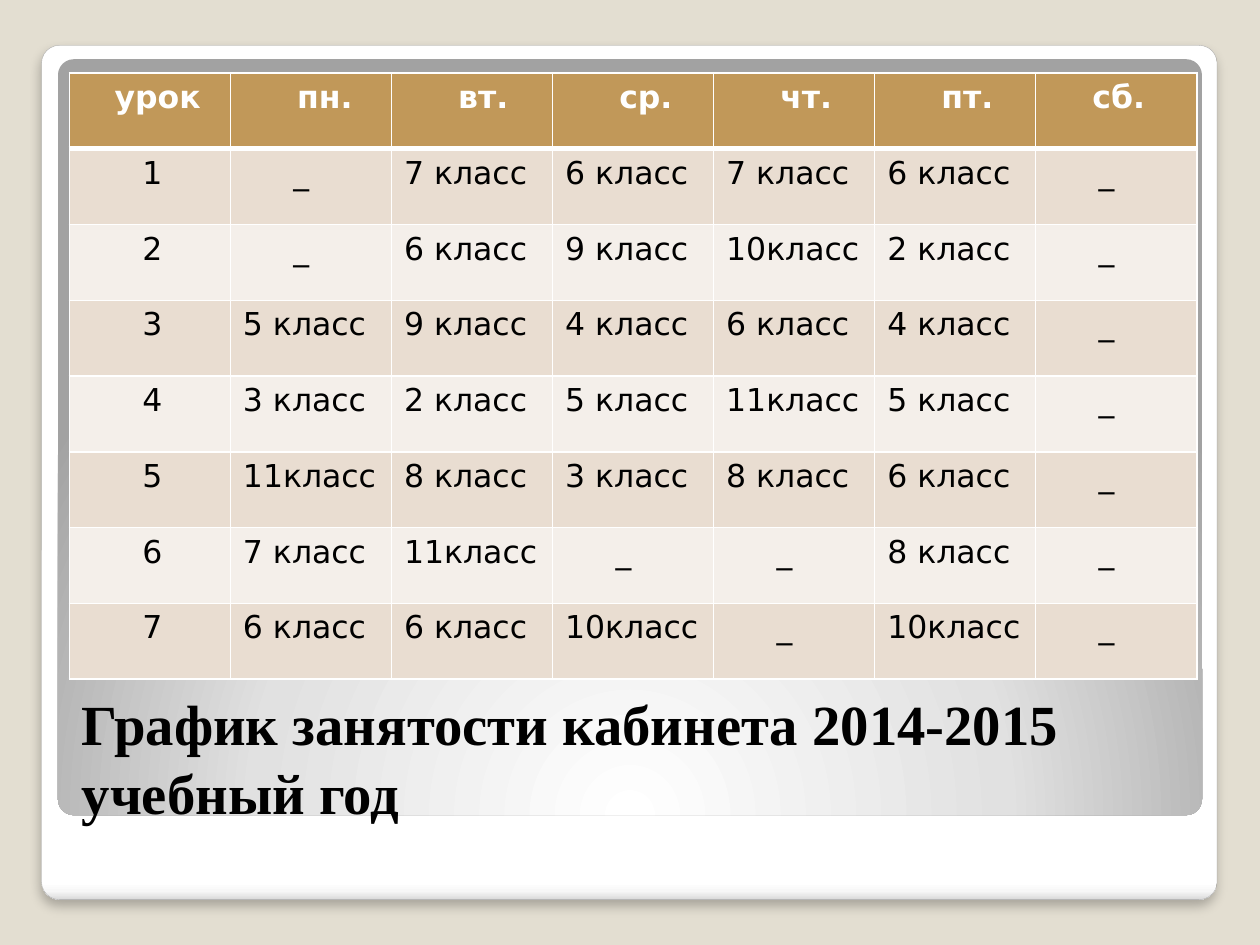
import dataclasses
import lxml.etree
import pptx
import pptx.dml.color
import pptx.enum.shapes
import pptx.enum.text
import pptx.oxml
import pptx.oxml.ns
import pptx.util

Inches = pptx.util.Inches
Pt = pptx.util.Pt

TITLE = "График занятости кабинета 2014-2015 учебный год"
DAYS = ["урок", "пн.", "вт.", "ср.", "чт.", "пт.", "сб."]
LESSONS = [
    ["1", "_", "7 класс", "6 класс", "7 класс", "6 класс", "_"],
    ["2", "_", "6 класс", "9 класс", "10класс", "2 класс", "_"],
    ["3", "5 класс", "9 класс", "4 класс", "6 класс", "4 класс", "_"],
    ["4", "3 класс", "2 класс", "5 класс", "11класс", "5 класс", "_"],
    ["5", "11класс", "8 класс", "3 класс", "8 класс", "6 класс", "_"],
    ["6", "7 класс", "11класс", "_", "_", "8 класс", "_"],
    ["7", "6 класс", "6 класс", "10класс", "_", "10класс", "_"],
]
HEADER_INDENTS = [0.26, 0.43, 0.43, 0.43, 0.43, 0.43, 0.35]
NUMBER_INDENT, DASH_INDENT, CELL_MARGIN = 0.48, 0.4, 0.1

CARD_STOPS = [(0, "FFFFFF"), (98, "FFFFFF"), (99, "F7F7F7"), (100, "DADADA")]
PANEL_STOPS = [(0, "FFFFFF"), (55, "E1E1E1"), (100, "A2A2A2")]
DOWNWARD = '<a:lin ang="5400000" scaled="0"/>'
FROM_BELOW = ('<a:path path="circle"><a:fillToRect l="50000" t="175000" '
              'r="50000" b="-75000"/></a:path>')


@dataclasses.dataclass
class Theme:
    background: str = "E3DED1"
    card_line: str = "A4A4A4"
    header: str = "C19859"
    bands: tuple = ("E9DDD1", "F4EFEA")
    light: str = "FFFFFF"
    dark: str = "000000"
    title_font: str = "Times New Roman"
    table_font: str = "DejaVu Sans"
    title_size: float = 32.4
    table_size: float = 18


theme = Theme()


def rgb(color):
    return pptx.dml.color.RGBColor.from_string(color)


def element(tag, body):
    return pptx.oxml.parse_xml(
        f"<a:{tag} {pptx.oxml.ns.nsdecls('a')}>{body}</a:{tag}>")


def add_text(tf, text, font, size, color, bold):
    r = tf.paragraphs[0].add_run()
    r.text = text
    r.font.name, r.font.size, r.font.bold = font, Pt(size), bold
    r.font.color.rgb = rgb(color)


def add_rounded(slide, box, stops, direction):
    sp = slide.shapes.add_shape(
        pptx.enum.shapes.MSO_SHAPE.ROUNDED_RECTANGLE, *map(Inches, box))
    sp.adjustments[0] = 0.021
    sp.shadow.inherit = False
    sp.line.fill.background()
    colors = "".join(f'<a:gs pos="{pos * 1000}"><a:srgbClr val="{color}"/></a:gs>'
                     for pos, color in stops)
    geometry = sp._element.spPr.find(pptx.oxml.ns.qn("a:prstGeom"))
    geometry.addnext(element("gradFill", f"<a:gsLst>{colors}</a:gsLst>{direction}"))
    return sp


def add_card(slide):
    sp = add_rounded(slide, (0.33, 0.36, 9.33, 6.78), CARD_STOPS, DOWNWARD)
    sp.line.color.rgb = rgb(theme.card_line)
    sp.line.width = Pt(0.16)
    effects = sp._element.spPr.find(pptx.oxml.ns.qn("a:effectLst"))
    shadow = element("outerShdw", f'<a:srgbClr val="{theme.dark}">'
                     '<a:alpha val="25000"/></a:srgbClr>')
    for name, value in (("blurRad", Pt(6)), ("dist", Pt(4)), ("dir", 5400000)):
        shadow.set(name, str(int(value)))
    effects.append(shadow)


def set_borders(cell, widths):
    """Draw the left, right, top and bottom borders, widths in points."""
    tcPr = cell._tc.get_or_add_tcPr()
    for i, (side, width) in enumerate(zip("LRTB", widths)):
        ln = element("ln" + side, "<a:solidFill>"
                     f'<a:srgbClr val="{theme.light}"/></a:solidFill>')
        ln.set("w", str(Pt(width)))
        tcPr.insert(i, ln)


def cell_indent(row, col, text):
    if row == 0:
        return HEADER_INDENTS[col]
    if col == 0:
        return NUMBER_INDENT
    return DASH_INDENT if text == "_" else 0


def add_schedule(slide):
    rows = [DAYS] + LESSONS
    width, height = Inches(8.95), Inches(4.81)
    table = slide.shapes.add_table(len(rows), len(DAYS), Inches(0.55),
                                   Inches(0.58), width, height).table
    table.first_row = table.horz_banding = False
    for column in table.columns:
        column.width = width // len(DAYS)
    for row in table.rows:
        row.height = height // len(rows)
    for i, texts in enumerate(rows):
        header = i == 0
        for j, text in enumerate(texts):
            cell = table.cell(i, j)
            cell.margin_left = Inches(CELL_MARGIN + cell_indent(i, j, text))
            cell.margin_right = Inches(0)
            cell.fill.solid()
            cell.fill.fore_color.rgb = rgb(
                theme.header if header else theme.bands[(i - 1) % 2])
            set_borders(cell, (1, 1, 3 if i == 1 else 1, 3 if header else 1))
            add_text(cell.text_frame, text, theme.table_font, theme.table_size,
                     theme.light if header else theme.dark, header)


def add_title(slide):
    box = slide.shapes.add_textbox(*map(Inches, (0.55, 5.45, 8.95, 1.15)))
    tf = box.text_frame
    tf.word_wrap = True
    tf.vertical_anchor = pptx.enum.text.MSO_ANCHOR.BOTTOM
    add_text(tf, TITLE, theme.title_font, theme.title_size, theme.dark, True)


def main():
    prs = pptx.Presentation()
    prs.slide_width, prs.slide_height = Inches(10), Inches(7.5)
    slide = prs.slides.add_slide(prs.slide_layouts[6])
    slide.background.fill.solid()
    slide.background.fill.fore_color.rgb = rgb(theme.background)
    add_card(slide)
    add_rounded(slide, (0.46, 0.47, 9.08, 6), PANEL_STOPS, FROM_BELOW)
    add_title(slide)
    add_schedule(slide)
    prs.save("out.pptx")


if __name__ == "__main__":
    main()
